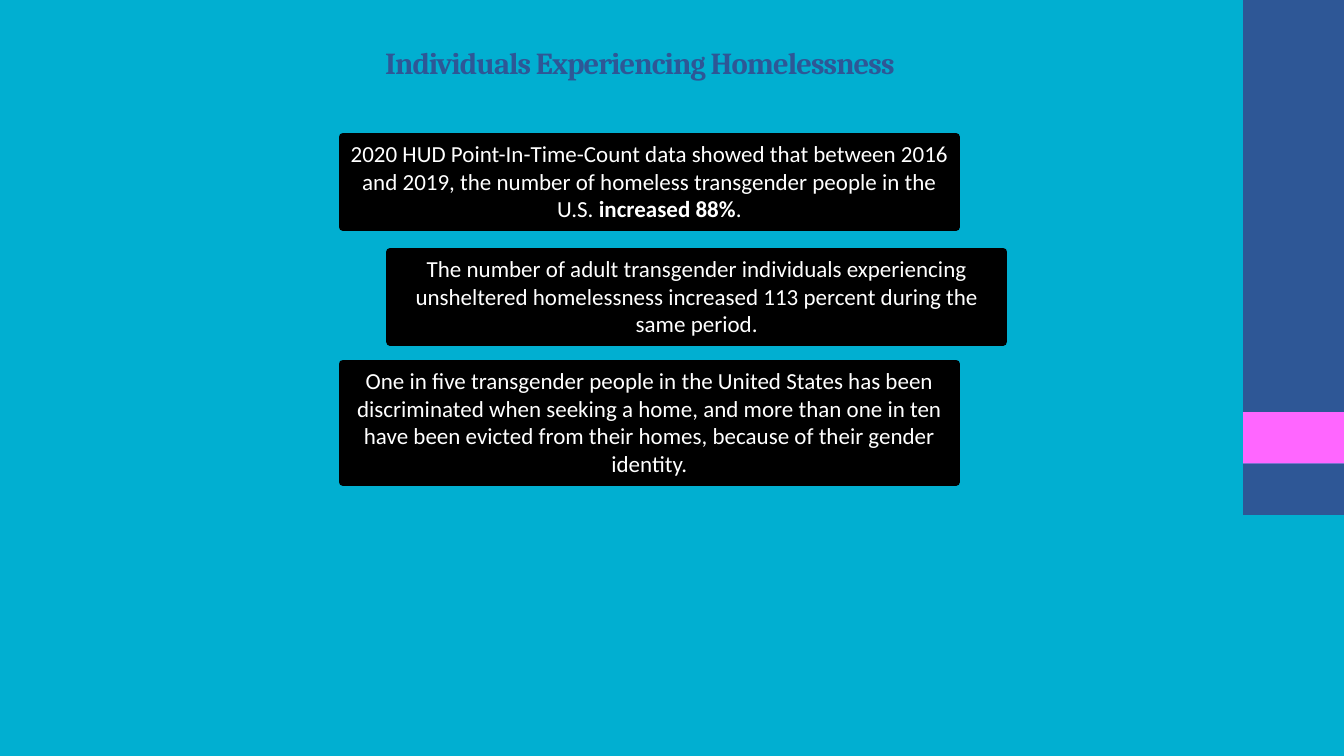
from lxml import etree
from pptx import Presentation
from pptx.dml.color import RGBColor
from pptx.enum.shapes import MSO_SHAPE
from pptx.enum.text import MSO_ANCHOR, PP_ALIGN
from pptx.oxml.ns import qn
from pptx.util import Inches, Pt

RECTANGLE = MSO_SHAPE.RECTANGLE
CENTER, LEFT = PP_ALIGN.CENTER, PP_ALIGN.LEFT
MIDDLE, TOP = MSO_ANCHOR.MIDDLE, MSO_ANCHOR.TOP
BACKGROUND, NAVY, PINK, BLACK, WHITE = "01AFD1", "2E5796", "FF66FF", "000000", "FFFFFF"

STATEMENTS = [
    ((3.4, 1.36, 6.08, 0.89), [
        ("2020 HUD Point-In-Time-Count data showed that between 2016 and 2019, "
         "the number of homeless transgender people in the U.S. ", False),
        ("increased 88%", True),
        (".", False)]),
    ((3.87, 2.5, 6.08, 0.89), [
        ("The number of adult transgender individuals experiencing unsheltered "
         "homelessness increased 113 percent during the same period.", False)]),
    ((3.4, 3.61, 6.08, 1.17), [
        ("One in five transgender people in the United States has been discriminated "
         "when seeking a home, and more than one in ten have been evicted from their "
         "homes, because of their gender identity.", False)]),
]


def color(hex_string):
    """Return the colour for a hex string."""
    return RGBColor.from_string(hex_string)


def add_block(slide, box, fill):
    """Add a plain filled rectangle without an outline."""
    shape = slide.shapes.add_shape(RECTANGLE, *map(Inches, box))
    shape.shadow.inherit = False
    shape.fill.solid()
    shape.fill.fore_color.rgb = color(fill)
    shape.line.fill.background()
    return shape


def write_text(shape, runs, font, size, text_color, alignment, anchor, insets):
    """Fill a shape with one paragraph of (text, bold) runs."""
    frame = shape.text_frame
    frame.word_wrap = True
    frame.vertical_anchor = anchor
    frame.margin_left, frame.margin_top, frame.margin_right, frame.margin_bottom = map(Inches, insets)
    paragraph = frame.paragraphs[0]
    paragraph.alignment = alignment
    for text, bold in runs:
        run = paragraph.add_run()
        run.text = text
        run.font.name = font
        run.font.size = Pt(size)
        run.font.bold = bold
        run.font.color.rgb = color(text_color)
    return paragraph


def add_sidebar(slide, left, top, width, band):
    """Stack the navy, pink and navy blocks of the side stripe."""
    for height, fill in ((8 * band, NAVY), (band, PINK), (band, NAVY)):
        add_block(slide, (left, top, width, height), fill)
        top += height


def add_title(slide, box, text):
    """Add the slide title with slightly tightened letters."""
    shape = slide.shapes.add_textbox(*map(Inches, box))
    paragraph = write_text(shape, [(text, True)], "Cambria", 21.8, NAVY, LEFT, TOP, (0.25, 0.07, 0, 0))
    for run in paragraph.runs:
        run.font._element.set("spc", "-70")


def add_statement(slide, box, runs):
    """Add a black box with a thick, round-cornered edge and centred text."""
    shape = add_block(slide, box, BLACK)
    shape.line.width = Pt(6)
    shape.line.color.rgb = color(BLACK)
    etree.SubElement(shape.line._get_or_add_ln(), qn("a:round"))
    write_text(shape, runs, "Calibri", 16.4, WHITE, CENTER, MIDDLE, (0.05, 0, 0.05, 0.02))


def build_slide(presentation):
    """Build the homelessness slide."""
    slide = presentation.slides.add_slide(presentation.slide_layouts[6])
    slide.background.fill.solid()
    slide.background.fill.fore_color.rgb = color(BACKGROUND)
    add_sidebar(slide, 12.33, 0, 1, 0.511)
    for box, runs in STATEMENTS:
        add_statement(slide, box, runs)
    add_title(slide, (3.57, 0.37, 8.47, 0.44), "Individuals Experiencing Homelessness")


def main():
    """Create and save the presentation."""
    presentation = Presentation()
    presentation.slide_width = Inches(13.33)
    presentation.slide_height = Inches(7.5)
    build_slide(presentation)
    presentation.save("out.pptx")


if __name__ == "__main__":
    main()
